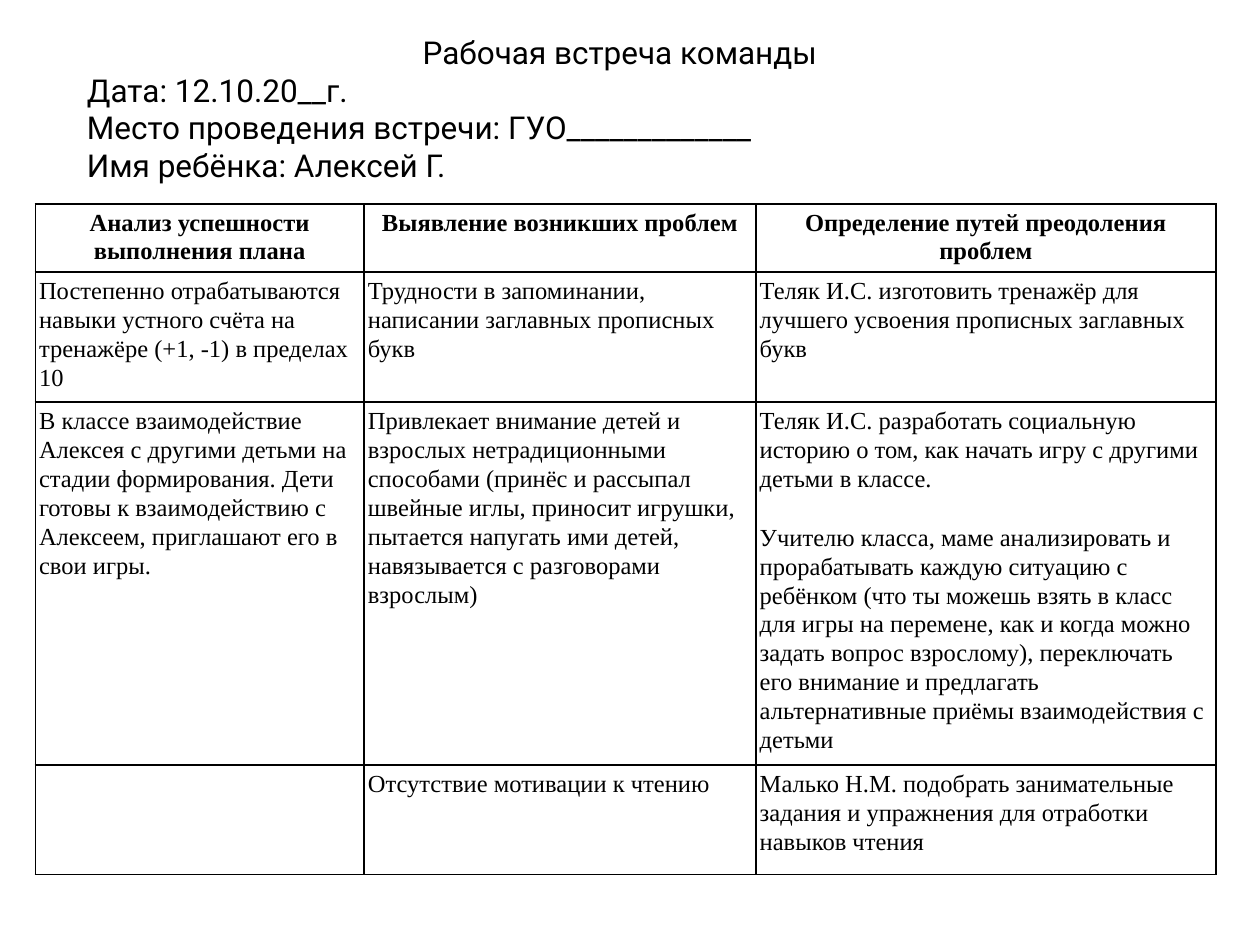
from lxml import etree
from pptx import Presentation
from pptx import util as u
from pptx.dml import color
from pptx.enum import text
from pptx.oxml import ns

INK = "000000"
HEADING = "Рабочая встреча команды"
DETAILS = [
    "Дата: 12.10.20__г.",
    "Место проведения встречи: ГУО_____________",
    "Имя ребёнка: Алексей Г.",
]
COLUMNS = [2.61, 3.11, 3.65]
ROWS = [0.54, 1.03, 2.88, 0.87]
MEETING = [
    [
        ["Анализ успешности выполнения плана"],
        ["Выявление возникших проблем"],
        ["Определение путей преодоления проблем"],
    ],
    [
        ["Постепенно отрабатываются навыки устного счёта на тренажёре (+1, -1) в пределах 10"],
        ["Трудности в запоминании, написании заглавных прописных букв"],
        ["Теляк И.С. изготовить тренажёр для лучшего усвоения прописных заглавных букв"],
    ],
    [
        ["В классе взаимодействие Алексея с другими детьми на стадии формирования. "
         "Дети готовы к взаимодействию с Алексеем, приглашают его в свои игры."],
        ["Привлекает внимание детей и взрослых нетрадиционными способами (принёс и "
         "рассыпал швейные иглы, приносит игрушки, пытается напугать ими детей, "
         "навязывается с разговорами взрослым)"],
        ["Теляк И.С. разработать социальную историю о том, как начать игру с другими "
         "детьми в классе.",
         "Учителю класса, маме анализировать и прорабатывать каждую ситуацию с ребёнком "
         "(что ты можешь взять в класс для игры на перемене, как и когда можно задать "
         "вопрос взрослому), переключать его внимание и предлагать альтернативные "
         "приёмы взаимодействия с детьми"],
    ],
    [
        [],
        ["Отсутствие мотивации к чтению"],
        ["Малько Н.М. подобрать занимательные задания и упражнения для отработки "
         "навыков чтения"],
    ],
]
HEADING_FONT = {"name": "Roboto", "size": u.Pt(18), "bold": False}
TABLE_FONT = {"name": "Times New Roman", "size": u.Pt(14)}
PLAIN = {"space_before": u.Pt(0), "space_after": u.Pt(0), "line_spacing": 1.0}
HEADER_CELL = {"alignment": text.PP_ALIGN.CENTER, "space_after": u.Pt(8), "line_spacing": 1.06}
BODY_CELL = {"alignment": text.PP_ALIGN.LEFT, "line_spacing": 1.07}


def paint(target, hex_value):
    """Give a colour format the colour of a hex string."""
    target.rgb = color.RGBColor.from_string(hex_value)


def apply(target, values):
    """Set every attribute named in a dict of format values."""
    for name, value in values.items():
        setattr(target, name, value)


def write(frame, lines, para_format, font_format):
    """Write one formatted paragraph for each line and return the paragraphs."""
    for index, line in enumerate(lines):
        para = frame.add_paragraph() if index else frame.paragraphs[0]
        span = para.add_run()
        span.text = line
        apply(para, para_format)
        apply(span.font, font_format)
        paint(span.font.color, INK)
    return frame.paragraphs


def fill_placeholder(holder, box, lines, align):
    """Move a placeholder to its box and fill it with unbulleted lines."""
    apply(holder, dict(zip(("left", "top", "width", "height"), map(u.Inches, box))))
    apply(holder.text_frame, {
        "word_wrap": True,
        "auto_size": text.MSO_AUTO_SIZE.NONE,
        "vertical_anchor": text.MSO_ANCHOR.TOP,
    })
    for para in write(holder.text_frame, lines, {**PLAIN, "alignment": align}, HEADING_FONT):
        properties = para._p.get_or_add_pPr()
        apply_indent = {"marL": "0", "indent": "0"}
        for name, value in apply_indent.items():
            properties.set(name, value)
        etree.SubElement(properties, ns.qn("a:buNone"))


def add_heading(page, box):
    """Place the centred heading and the meeting details below it."""
    left, top, width, height = box
    line = 0.3
    title, body = page.placeholders
    fill_placeholder(title, (left, top, width, line + 0.1), [HEADING], text.PP_ALIGN.CENTER)
    fill_placeholder(body, (left, top + line, width, height - line), DETAILS, text.PP_ALIGN.LEFT)


def add_borders(cell):
    """Draw a thin solid line on each side of a cell."""
    properties = cell._tc.get_or_add_tcPr()
    for side in ("lnL", "lnR", "lnT", "lnB"):
        line = etree.SubElement(properties, ns.qn(f"a:{side}"), w=str(u.Pt(1)))
        solid = etree.SubElement(line, ns.qn("a:solidFill"))
        etree.SubElement(solid, ns.qn("a:srgbClr"), val=INK)


def add_meeting_table(page, box):
    """Place the table of results, problems and solutions."""
    frame = page.shapes.add_table(len(ROWS), len(COLUMNS), *map(u.Inches, box))
    table = frame.table
    apply(table, {"first_row": False, "horz_banding": False})
    for column, width in zip(table.columns, COLUMNS):
        column.width = u.Inches(width)
    for row_index, (row, height) in enumerate(zip(table.rows, ROWS)):
        row.height = u.Inches(height)
        is_header = row_index == 0
        para_format = HEADER_CELL if is_header else BODY_CELL
        for cell, lines in zip(row.cells, MEETING[row_index]):
            sides = ("left", "right", "top", "bottom")
            apply(cell, {f"margin_{side}": u.Inches(0.03) for side in sides})
            add_borders(cell)
            cell.fill.background()
            paras = write(cell.text_frame, lines, para_format, {**TABLE_FONT, "bold": is_header})
            for para in paras[1:]:
                para.space_before = u.Pt(17)


def main():
    """Build the meeting slide and save it."""
    deck = Presentation()
    apply(deck, {"slide_width": u.Inches(10), "slide_height": u.Inches(7.5)})
    page = deck.slides.add_slide(deck.slide_layouts[1])
    add_meeting_table(page, (0.28, 1.62, sum(COLUMNS), sum(ROWS)))
    add_heading(page, (0.59, 0.21, 8.66, 1.62))
    deck.save("out.pptx")


if __name__ == "__main__":
    main()
